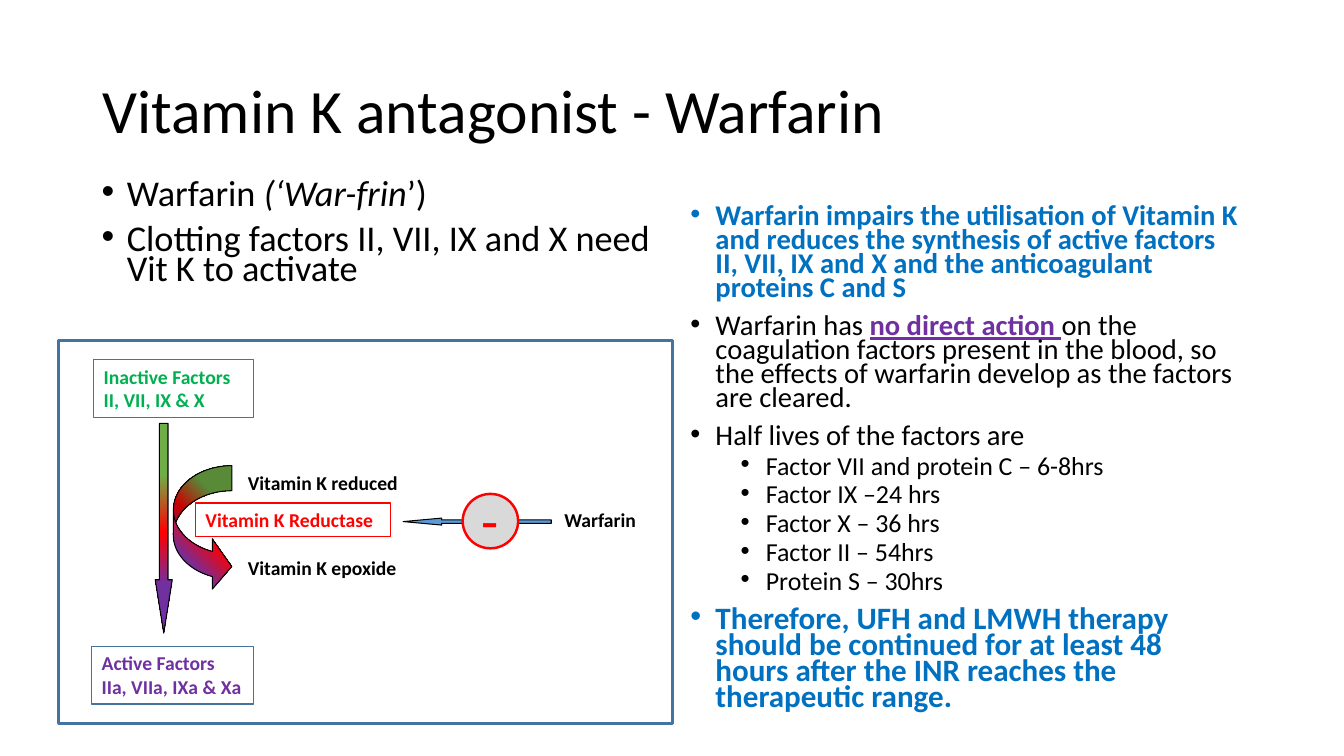
from lxml import etree
from pptx import Presentation
from pptx import util as u
from pptx.dml import color
from pptx.enum import shapes, text
from pptx.oxml import ns, parse_xml

Pt = u.Pt
KIND = shapes.MSO_SHAPE
BLACK, BLUE, PURPLE, RED, GREEN = "000000", "0070C0", "7030A0", "FF0000", "00B050"
FRAME = "43739E"


def paint(target, hex_colour):
    """Give a fill or a font a solid colour."""
    if hasattr(target, "solid"):
        target.solid()
        target = target.fore_color
    else:
        target = target.color
    target.rgb = color.RGBColor.from_string(hex_colour)


def style(run, size, hex_colour, bold=False, italic=False, underline=False):
    """Format one run."""
    font = run.font
    font.name, font.size = "Calibri", Pt(size)
    font.bold, font.italic, font.underline = bold, italic, underline
    paint(font, hex_colour)


def blend(shape, stops, direction):
    """Fill a shape with a gradient of (percent, colour) stops."""
    colours = "".join(f'<a:gs pos="{pos * 1000}"><a:srgbClr val="{hue}"/></a:gs>'
                      for pos, hue in stops)
    gradient = parse_xml(f'<a:gradFill {ns.nsdecls("a")} rotWithShape="1">'
                         f'<a:gsLst>{colours}</a:gsLst>{direction}</a:gradFill>')
    shape.fill.background()
    blank = shape.element.spPr.find(ns.qn("a:noFill"))
    blank.getparent().replace(blank, gradient)


def outlined(slide, kind, box, line, width=0.75, fill=None, adjust=()):
    """Add a preset shape with an outline and an optional solid fill."""
    shape = slide.shapes.add_shape(kind, *map(Pt, box))
    shape.shadow.inherit = False
    for i, value in enumerate(adjust):
        shape.adjustments[i] = value
    paint(shape.line.fill, line)
    shape.line.width = Pt(width)
    if fill:
        paint(shape.fill, fill)
    else:
        shape.fill.background()
    return shape


def label(slide, box, words, hue=BLACK, line=None):
    """Add a bold diagram label, framed when a line colour is given."""
    if line:
        shape = outlined(slide, KIND.RECTANGLE, box, line)
    else:
        shape = slide.shapes.add_textbox(*map(Pt, box))
    frame = shape.text_frame
    frame.word_wrap = True
    frame.auto_size = text.MSO_AUTO_SIZE.SHAPE_TO_FIT_TEXT
    frame.vertical_anchor = text.MSO_ANCHOR.TOP
    frame.text = words
    frame.paragraphs[0].alignment = text.PP_ALIGN.LEFT
    for run in frame.paragraphs[0].runs:
        style(run, 14, hue, bold=True)


def heading(slide, box, words):
    """Place and format the title."""
    title = slide.shapes.title
    title.left, title.top, title.width, title.height = map(Pt, box)
    frame = title.text_frame
    frame.text = words
    frame.vertical_anchor = text.MSO_ANCHOR.MIDDLE
    line = frame.paragraphs[0]
    line.alignment, line.line_spacing = text.PP_ALIGN.LEFT, 0.9
    style(line.runs[0], 44, BLACK)


def bullet_list(slide, box, items):
    """Add bullets given as (level, size, [(words, colour, formats)])."""
    frame = slide.shapes.add_textbox(*map(Pt, box)).text_frame
    frame.word_wrap = True
    for i, (level, size, pieces) in enumerate(items):
        item = frame.add_paragraph() if i else frame.paragraphs[0]
        item.level, item.line_spacing = level, 0.7
        item.space_before = Pt(5 if level else 10)
        props = item._p.get_or_add_pPr()
        props.set("marL", str(Pt(54 if level else 18)))
        props.set("indent", str(Pt(-18)))
        etree.SubElement(props, ns.qn("a:buFont")).set("typeface", "Arial")
        etree.SubElement(props, ns.qn("a:buChar")).set("char", "•")
        for words, hue, formats in pieces:
            run = item.add_run()
            run.text = words
            style(run, size, hue, **formats)


def vitamin_k_cycle(slide, box):
    """Draw the framed diagram of factor activation and its inhibition."""
    left, top, width, height = box

    def at(x, y, w, h):
        """Shift a box from the frame to the slide."""
        return left + x, top + y, w, h

    cycle = outlined(slide, KIND.CURVED_RIGHT_ARROW, at(82, 89.2, 41.8, 90), BLACK,
                     adjust=(0.429, 0.857, 0.333))
    blend(cycle, [(25, "70AD47"), (50, RED), (77, PURPLE)],
          '<a:path path="circle"><a:fillToRect l="100000" b="100000"/></a:path>')
    activation = outlined(slide, KIND.DOWN_ARROW, at(69.1, 59, 12.2, 149.8), BLACK,
                          adjust=(0.5, 3.125))
    blend(activation, [(25, "70AD47"), (52, RED), (77, PURPLE)],
          '<a:lin ang="5400000" scaled="0"/>')
    outlined(slide, KIND.LEFT_ARROW, at(246.2, 126.7, 105.8, 5), BLACK,
             fill="5B9BD5", adjust=(0.5, 5.5))

    label(slide, at(128.1, 89.2, 152.6, 24.3), "Vitamin K reduced")
    label(slide, at(97.9, 115.9, 139, 24.3), "Vitamin K Reductase", RED, RED)
    label(slide, at(128.1, 150.4, 152.6, 24.3), "Vitamin K epoxide")
    label(slide, at(25.2, 13.6, 113.8, 41.3), "Inactive Factors\vII, VII, IX & X", GREEN, FRAME)
    label(slide, at(23.7, 218.2, 115.9, 41.3), "Active Factors\vIIa, VIIa, IXa & Xa",
          PURPLE, FRAME)

    inhibition = outlined(slide, KIND.OVAL, at(288.7, 109.4, 39.6, 38.9), RED, 1.75, "D9D9D9")
    frame = inhibition.text_frame
    frame.margin_top = 0
    frame.vertical_anchor = text.MSO_ANCHOR.MIDDLE
    frame.text = "-"
    frame.paragraphs[0].alignment = text.PP_ALIGN.CENTER
    style(frame.paragraphs[0].runs[0], 40, RED)

    label(slide, at(354.2, 115.9, 70.6, 24.3), "Warfarin")
    outlined(slide, KIND.RECTANGLE, box, FRAME, 2)


def main():
    """Build and save the slide."""
    deck = Presentation()
    deck.slide_width, deck.slide_height = Pt(960), Pt(540)
    slide = deck.slides.add_slide(deck.slide_layouts.get_by_name("Title Only"))
    bold = {"bold": True}
    half_lives = ["Factor VII and protein C – 6-8hrs", "Factor IX –24 hrs",
                  "Factor X – 36 hrs", "Factor II – 54hrs", "Protein S – 30hrs"]

    heading(slide, (66, 28.8, 828, 104.4), "Vitamin K antagonist - Warfarin")
    bullet_list(slide, (65.5, 126.7, 408.2, 342.7), [
        (0, 25.9, [("Warfarin ", BLACK, {}), ("(‘War-frin", BLACK, {"italic": True}),
                   ("’)", BLACK, {})]),
        (0, 25.9, [("Clotting factors II, VII, IX and X need Vit K to activate", BLACK, {})]),
    ])
    bullet_list(slide, (486, 144, 408.2, 387.4), [
        (0, 20.4, [("Warfarin impairs the utilisation of Vitamin K and reduces the synthesis of "
                    "active factors II, VII, IX and X and the anticoagulant proteins C and S",
                    BLUE, bold)]),
        (0, 20.4, [("Warfarin has ", BLACK, {}),
                   ("no direct action ", PURPLE, {"bold": True, "underline": True}),
                   ("on the coagulation factors present in the blood, so the effects of "
                    "warfarin develop as the factors are cleared.", BLACK, {})]),
        (0, 20.4, [("Half lives of the factors are", BLACK, {})]),
        *[(1, 18.5, [(factor, BLACK, {})]) for factor in half_lives],
        (0, 22.2, [("Therefore, UFH and LMWH therapy should be continued for at least 48 hours "
                    "after the INR reaches the therapeutic range.", BLUE, bold)]),
    ])
    vitamin_k_cycle(slide, (41.8, 243.4, 438.5, 273.6))
    deck.save("out.pptx")


if __name__ == "__main__":
    main()
